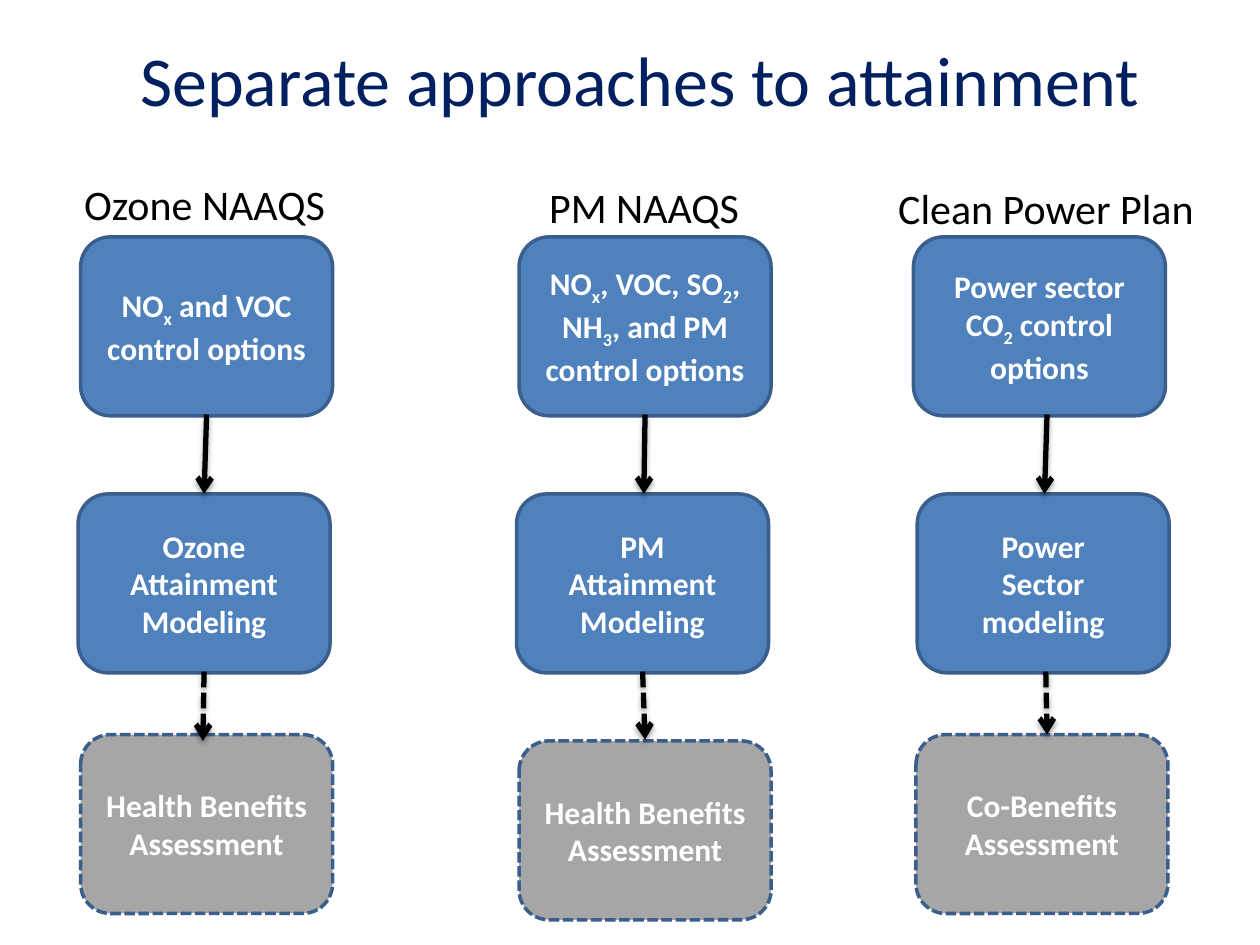
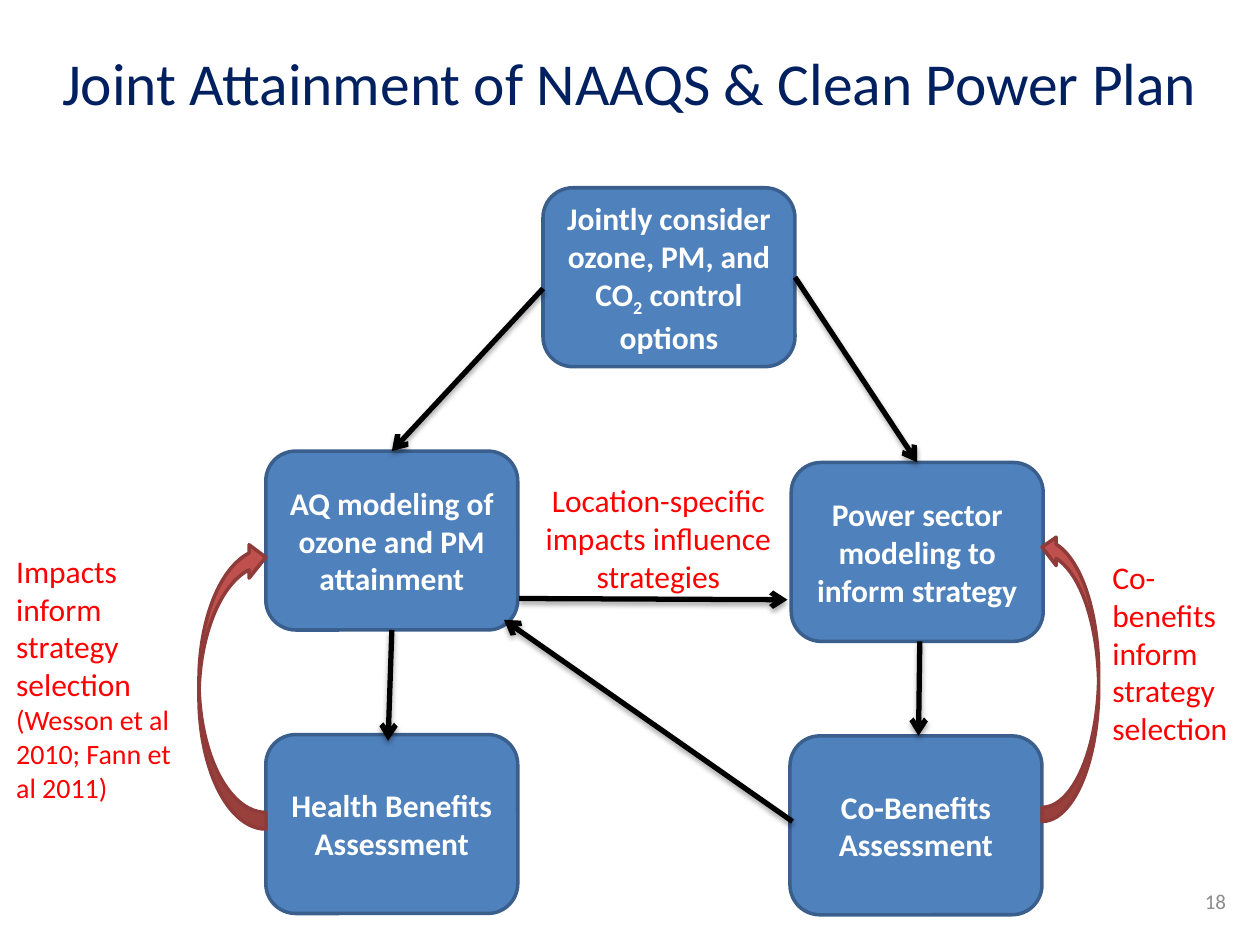
from dataclasses import dataclass

from lxml.etree import SubElement
from pptx import Presentation
from pptx.dml.color import RGBColor
from pptx.enum.dml import MSO_LINE_DASH_STYLE as Dash
from pptx.enum.shapes import MSO_CONNECTOR as Connector, MSO_SHAPE as Preset
from pptx.enum.text import MSO_ANCHOR as Anchor, MSO_AUTO_SIZE as AutoSize, PP_ALIGN as Align
from pptx.oxml.ns import qn
from pptx.shapes.autoshape import Shape
from pptx.slide import Slide
from pptx.text.text import TextFrame
from pptx.util import Emu, Inches, Pt

# Shared style
NAVY = RGBColor(0x00, 0x20, 0x60)
BLUE = RGBColor(0x4F, 0x81, 0xBD)
BLUE_EDGE = RGBColor(0x3A, 0x5F, 0x8C)
GRAY = RGBColor(0xA6, 0xA6, 0xA6)
NUMBER_GRAY = RGBColor(0x8C, 0x8C, 0x8C)
BRICK = RGBColor(0xC0, 0x50, 0x4D)
BRICK_EDGE = RGBColor(0x8E, 0x3B, 0x39)
RED = RGBColor(0xFF, 0x00, 0x00)
BLACK = RGBColor(0x00, 0x00, 0x00)
WHITE = RGBColor(0xFF, 0xFF, 0xFF)
FONT = "Calibri"

# Grid of 100 columns and 75 rows
WIDTH, HEIGHT = Inches(10), Inches(7.5)
COLUMN, ROW = WIDTH / 100, HEIGHT / 75
STEP_COLUMNS, STEP_ROWS = 20, 14.2

Point = tuple[float, float]


@dataclass(frozen=True)
class Area:
    column: float
    row: float
    columns: float
    rows: float

    def emu(self) -> tuple[Emu, ...]:
        return (Emu(round(self.column * COLUMN)), Emu(round(self.row * ROW)),
                Emu(round(self.columns * COLUMN)), Emu(round(self.rows * ROW)))


@dataclass(frozen=True)
class Step:
    text: str
    column: float
    row: float
    optional: bool = False


@dataclass(frozen=True)
class Arrow:
    start: Point
    end: Point
    optional: bool = False


@dataclass(frozen=True)
class Label:
    text: str
    area: Area
    size: float = 18
    color: RGBColor = RED
    align: Align = Align.LEFT
    anchor: Anchor = Anchor.TOP
    wrap: bool = True
    grow: bool = True
    citation: str = ""


@dataclass(frozen=True)
class Feedback:
    area: Area
    flips: tuple[str, ...]


def apply(target: object, values: dict[str, object]) -> None:
    for name, value in values.items():
        setattr(target, name, value)


def write(frame: TextFrame, text: str, size: float, color: RGBColor, align: Align,
          bold: bool = False, citation: str = "") -> None:
    """Underscores enclose subscripts; line breaks separate paragraphs."""
    for index, line in enumerate(text.split("\n")):
        paragraph = frame.add_paragraph() if index else frame.paragraphs[0]
        paragraph.alignment = align
        pieces = [(piece, size, place % 2) for place, piece in enumerate(line.split("_"))]
        if citation:
            pieces.append((citation, 16, 0))
        for piece, points, subscript in pieces:
            run = paragraph.add_run()
            run.text = piece
            apply(run.font, {"name": FONT, "size": Pt(points), "bold": bold})
            run.font.color.rgb = color
            if subscript:
                run._r.get_or_add_rPr().set("baseline", "-25000")


def draw_preset(slide: Slide, preset: Preset, area: Area, fill: RGBColor,
                edge: RGBColor) -> Shape:
    shape = slide.shapes.add_shape(preset, *area.emu())
    shape.shadow.inherit = False
    shape.fill.solid()
    shape.fill.fore_color.rgb = fill
    shape.line.color.rgb = edge
    shape.line.width = Pt(2)
    return shape


def draw_step(slide: Slide, step: Step) -> None:
    area = Area(step.column, step.row, STEP_COLUMNS, STEP_ROWS)
    box = draw_preset(slide, Preset.ROUNDED_RECTANGLE, area,
                      GRAY if step.optional else BLUE, BLUE_EDGE)
    if step.optional:
        box.line.dash_style = Dash.SQUARE_DOT
    apply(box.text_frame, {"word_wrap": True, "vertical_anchor": Anchor.MIDDLE})
    write(box.text_frame, step.text, 18, WHITE, Align.CENTER, bold=True)


def draw_arrow(slide: Slide, arrow: Arrow) -> None:
    ends = [Emu(round(value * unit)) for point in (arrow.start, arrow.end)
            for value, unit in zip(point, (COLUMN, ROW))]
    link = slide.shapes.add_connector(Connector.STRAIGHT, *ends)
    link.line.color.rgb = BLACK
    link.line.width = Pt(3)
    if arrow.optional:
        link.line.dash_style = Dash.SQUARE_DOT
    properties = link.element.spPr
    SubElement(properties.find(qn("a:ln")), qn("a:tailEnd"), type="arrow")
    # Soft shadow straight below the line
    effects = SubElement(properties, qn("a:effectLst"))
    shadow = SubElement(effects, qn("a:outerShdw"), blurRad=str(Pt(3.1)),
                        dist=str(Pt(1.8)), dir="5400000", rotWithShape="0")
    tint = SubElement(shadow, qn("a:srgbClr"), val=str(BLACK))
    SubElement(tint, qn("a:alpha"), val="35000")


def draw_label(slide: Slide, label: Label) -> None:
    frame = slide.shapes.add_textbox(*label.area.emu()).text_frame
    apply(frame, {
        "word_wrap": label.wrap,
        "vertical_anchor": label.anchor,
        "auto_size": AutoSize.SHAPE_TO_FIT_TEXT if label.grow else AutoSize.NONE,
    })
    write(frame, label.text, label.size, label.color, label.align, citation=label.citation)


def draw_feedback(slide: Slide, feedback: Feedback) -> None:
    curve = draw_preset(slide, Preset.CURVED_LEFT_ARROW, feedback.area, BRICK, BRICK_EDGE)
    for flip in feedback.flips:
        curve.element.spPr.find(qn("a:xfrm")).set(flip, "1")


def title(text: str, area: Area, size: float) -> Label:
    return Label(text, area, size, NAVY, Align.CENTER, Anchor.MIDDLE, grow=False)


def heading(text: str, area: Area) -> Label:
    return Label(text, area, 24, BLACK, wrap=False)


DRAWERS = {Step: draw_step, Arrow: draw_arrow, Label: draw_label, Feedback: draw_feedback}

# Content: each program runs from controls through modeling to assessment
CONTROLS_ROW, MODELING_ROW, ASSESSMENT_ROW = 18.8, 39.2, 58.3
CONTROLS_END, MODELING_END = 32.9, 53.3

SEPARATE = [
    title("Separate approaches to attainment", Area(5.8, 0, 90, 12.5), 40),
    Step("NO_x_ and VOC control options", 6.4, CONTROLS_ROW),
    Step("Ozone Attainment Modeling", 6.2, MODELING_ROW),
    Step("Health Benefits Assessment", 6.4, ASSESSMENT_ROW, optional=True),
    Step("NO_x_, VOC, SO_2_, NH_3_, and PM control options", 41.2, CONTROLS_ROW),
    Step("PM\nAttainment Modeling", 41, MODELING_ROW),
    Step("Health Benefits Assessment", 41.2, 58.8, optional=True),
    Step("Power sector CO_2_ control options", 72.5, CONTROLS_ROW),
    Step("Power\nSector\nmodeling", 72.8, MODELING_ROW),
    Step("Co-Benefits Assessment", 72.7, ASSESSMENT_ROW, optional=True),
    Arrow((16.4, CONTROLS_END), (16.2, MODELING_ROW)),
    Arrow((51.2, CONTROLS_END), (51.1, MODELING_ROW)),
    Arrow((83.1, CONTROLS_END), (82.9, MODELING_ROW)),
    Arrow((16.2, MODELING_END), (16.1, 58.8), optional=True),
    Arrow((51, MODELING_END), (51.2, 58.7), optional=True),
    Arrow((83, MODELING_END), (83.1, ASSESSMENT_ROW), optional=True),
    heading("Ozone NAAQS", Area(5.7, 13.7, 21.3, 5)),
    heading("PM NAAQS", Area(42.6, 13.9, 17.2, 5)),
    heading("Clean Power Plan", Area(70.3, 14, 25.7, 5)),
]

# Content: one shared choice of controls with feedback from both assessments
JOINT = [
    title("Joint Attainment of NAAQS & Clean Power Plan", Area(3.3, 0.2, 93.3, 12.5), 34),
    Label("18", Area(75, 69.5, 23.3, 4), 12, NUMBER_GRAY, Align.RIGHT, Anchor.MIDDLE,
          grow=False),
    Step("Jointly consider ozone, PM, and CO_2_ control options", 43.1, 14.9),
    Step("AQ modeling of ozone and PM attainment", 21.1, 35.8),
    Step("Health Benefits Assessment", 21.1, ASSESSMENT_ROW),
    Step("Power sector modeling to inform strategy", 62.8, 36.7),
    Step("Co-Benefits Assessment", 62.7, 58.4),
    Feedback(Area(15.8, 42.9, 5.3, 22.9), ("flipH", "flipV")),
    Feedback(Area(82.7, 42.3, 4.5, 22.9), ("flipV",)),
    Label("Impacts inform strategy selection ", Area(0.3, 43.3, 15.5, 21.2),
          citation="(Wesson et al 2010; Fann et al 2011)"),
    Label("Co-benefits inform strategy selection", Area(87.3, 43.8, 13.1, 16.2)),
    Label("Location-specific impacts influence strategies", Area(42, 37.7, 20.5, 10.2),
          align=Align.CENTER),
    Arrow((31.1, 50), (30.8, 58.8)),
    Arrow((73, 50.9), (72.9, 58.4)),
    Arrow((41.2, 47.5), (62.5, 47.6)),
    Arrow((62.9, 65.2), (40, 49.2)),
    Arrow((43.1, 22.9), (31.1, 35.8)),
    Arrow((63.1, 22), (72.8, 36.7)),
]


def main() -> None:
    deck = Presentation()
    apply(deck, {"slide_width": WIDTH, "slide_height": HEIGHT})
    for content in (SEPARATE, JOINT):
        slide = deck.slides.add_slide(deck.slide_layouts[6])
        for part in content:
            DRAWERS[type(part)](slide, part)
    deck.save("out.pptx")


if __name__ == "__main__":
    main()
